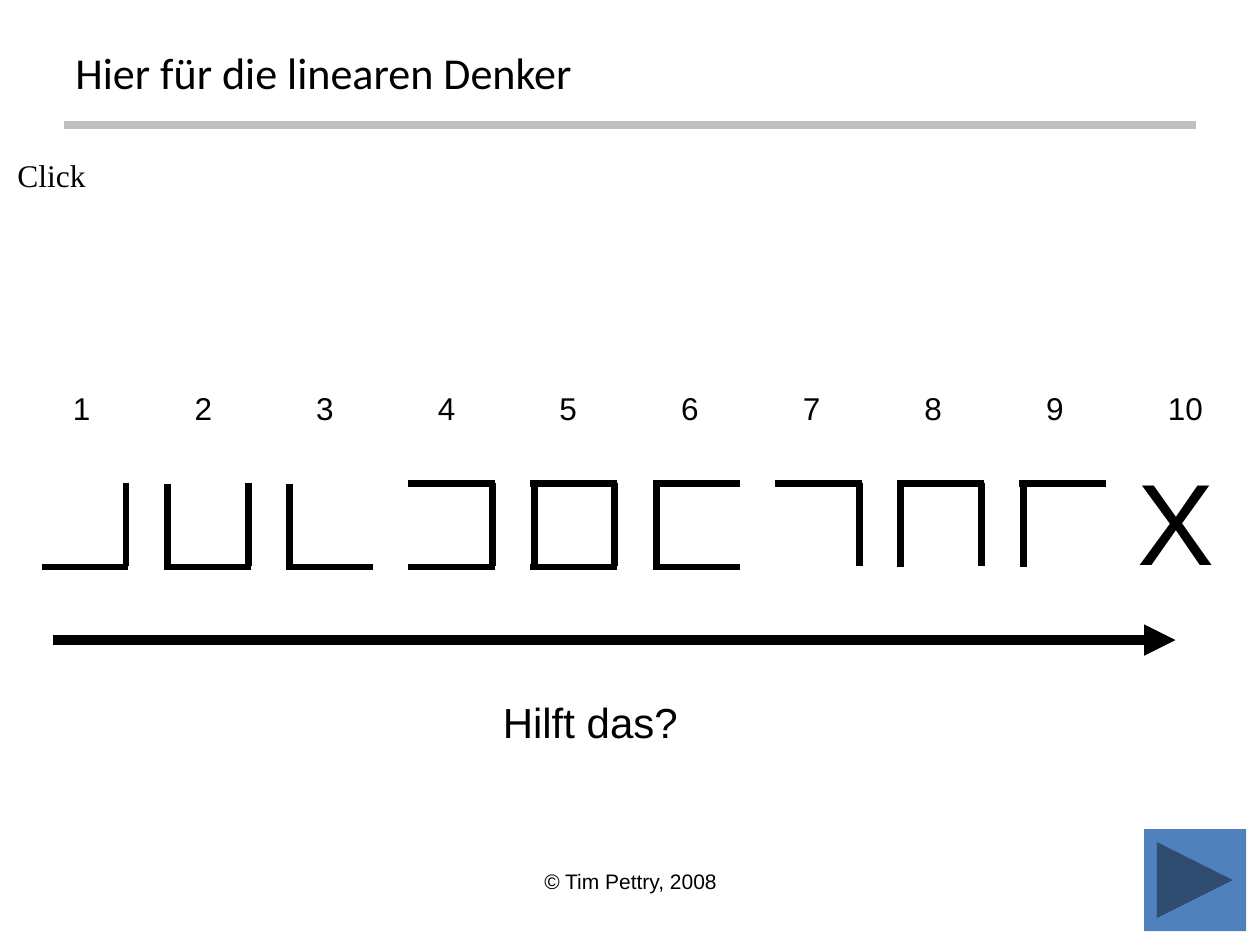
from lxml.etree import SubElement
from pptx import Presentation
from pptx.dml.color import RGBColor
from pptx.enum.shapes import MSO_CONNECTOR, MSO_SHAPE
from pptx.enum.text import MSO_ANCHOR as ANCHOR, PP_ALIGN as ALIGN
from pptx.oxml.ns import qn
from pptx.util import Inches, Pt

COLORS = {"ink": "000000", "rule": "BFBFBF", "button": "4F81BD"}
GLYPHS = ["rb", "lrb", "lb", "trb", "tlrb", "tlb", "tr", "tlr", "tl"]
SIDES = {
    "t": (0, 0.01, 0.69, 0.01),
    "b": (0, 0.67, 0.69, 0.67),
    "l": (0.03, 0.01, 0.03, 0.67),
    "r": (0.67, 0, 0.67, 0.66),
}


def add_text(slide, text, left, top, width, height, size=18, font="Arial",
             align=ALIGN.LEFT, anchor=ANCHOR.TOP, wrap=True):
    label = slide.shapes.add_textbox(
        Inches(left), Inches(top), Inches(width), Inches(height))
    frame = label.text_frame
    frame.word_wrap = wrap
    frame.vertical_anchor = anchor
    paragraph = frame.paragraphs[0]
    paragraph.alignment = align
    run = paragraph.add_run()
    run.text = text
    run.font.size = Pt(size)
    run.font.name = font
    run.font.color.rgb = RGBColor.from_string(COLORS["ink"])


def add_line(slide, x1, y1, x2, y2, weight, color="ink", arrow=False):
    stroke = slide.shapes.add_connector(
        MSO_CONNECTOR.STRAIGHT, Inches(x1), Inches(y1), Inches(x2), Inches(y2))
    stroke.line.color.rgb = RGBColor.from_string(COLORS[color])
    stroke.line.width = Pt(weight)
    if arrow:
        SubElement(stroke.line._get_or_add_ln(), qn("a:tailEnd"), type="triangle")
    SubElement(stroke._element.spPr, qn("a:effectLst"))


def add_glyph(slide, sides, left, top):
    for side in sides:
        x1, y1, x2, y2 = SIDES[side]
        add_line(slide, left + x1, top + y1, left + x2, top + y2, 4)


def add_next_button(slide, left, top, size):
    button = slide.shapes.add_shape(
        MSO_SHAPE.ACTION_BUTTON_FORWARD_OR_NEXT,
        Inches(left), Inches(top), Inches(size), Inches(size))
    button.shadow.inherit = False
    button.fill.solid()
    button.fill.fore_color.rgb = RGBColor.from_string(COLORS["button"])
    button.line.fill.background()


def main():
    """Build the slide that lines up the ten digit signs in a row."""
    prs = Presentation()
    prs.slide_width, prs.slide_height = Inches(10), Inches(7.5)
    slide = prs.slides.add_slide(prs.slide_layouts[6])

    add_line(slide, 0.51, 0.99, 9.49, 0.99, 4.5, color="rule")
    add_text(slide, "© Tim Pettry, 2008", 3.42, 6.84, 3.17, 0.52,
             size=12, align=ALIGN.CENTER)
    add_text(slide, "Hier für die linearen Denker", 0.5, 0.3, 7.18, 0.54,
             size=25.2, font="Calibri", anchor=ANCHOR.MIDDLE)
    add_line(slide, 0.42, 5.08, 9.33, 5.08, 6, arrow=True)

    for number in range(1, 11):
        width = 0.34 if number < 10 else 0.48
        add_text(slide, str(number), 0.48 + (number - 1) * 8.69 / 9, 3.04,
                 width, 0.4, wrap=False)
    for column, sides in enumerate(GLYPHS):
        add_glyph(slide, sides, 0.33 + column * 0.97, 3.83)
    add_text(slide, "X", 8.93, 3.52, 0.81, 1.2,
             size=66, align=ALIGN.CENTER, wrap=False)

    add_text(slide, "Hilft das?", 3.88, 5.48, 1.61, 0.5,
             size=24, align=ALIGN.CENTER, wrap=False)
    add_text(slide, "Click", 0.04, 1.19, 0.75, 0.4, font="Times New Roman")
    add_next_button(slide, 9.08, 6.58, 0.81)
    prs.save("out.pptx")


if __name__ == "__main__":
    main()
